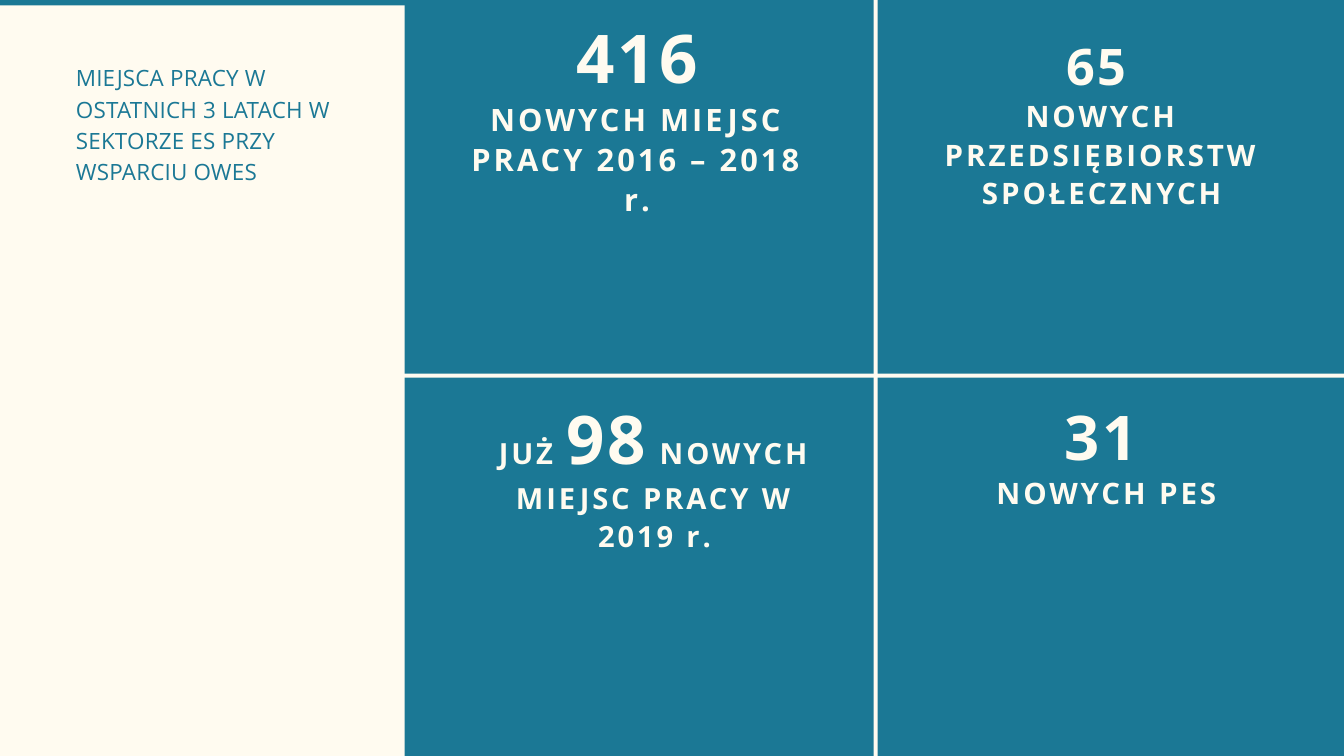
from pptx import Presentation
from pptx.dml.color import RGBColor
from pptx.enum.shapes import MSO_SHAPE
from pptx.enum.text import MSO_ANCHOR, MSO_AUTO_SIZE, PP_ALIGN
from pptx.util import Inches, Pt

TEAL = RGBColor(0x1B, 0x78, 0x95)
CREAM = RGBColor(0xFF, 0xFB, 0xF0)
FONT = "Open Sans"
WIDTH, HEIGHT = 20, 11.25
PANEL_RIGHT = 6.02
COL_RULE, ROW_RULE, RULE = 13, 5.56, 0.06
COLUMNS = [(PANEL_RIGHT, COL_RULE), (COL_RULE + RULE, WIDTH)]
ROWS = [(0, ROW_RULE), (ROW_RULE + RULE, HEIGHT)]

CELLS = [
    (0, 0, (0.88, 0.85, 5.16, 3.02), 33,
     [[("416", 72)], [("NOWYCH MIEJSC PRACY 2016 – 2018 r.", 33)]]),
    (1, 0, (0.86, 0.85, 4.95, 2.27), 31.6,
     [[("65", 54), (" ", 31.6)],
      [("NOWYCH PRZEDSIĘBIORSTW SPOŁECZNYCH", 31.6)]]),
    (0, 1, (1.28, 0.93, 4.88, 1.73), 31.19,
     [[("JUŻ ", 31.19), ("98", 72), (" ", 32),
       ("NOWYCH MIEJSC PRACY W 2019 r.", 31.19)]]),
    (1, 1, (0.93, 0.84, 4.95, 1.12), 31.6,
     [[("31", 66), (" ", 31.6)], [("NOWYCH PES", 31.6)]]),
]


def add_block(s, box):
    """Draw a plain cream rectangle in the box."""
    sp = s.shapes.add_shape(MSO_SHAPE.RECTANGLE, *map(Inches, box))
    sp.shadow.inherit = False
    sp.fill.solid()
    sp.fill.fore_color.rgb = CREAM
    sp.line.fill.background()


def add_text(s, box, paragraphs, leading, tracking, color, align, bold):
    """Place paragraphs of (text, size) runs in the box."""
    tf = s.shapes.add_textbox(*map(Inches, box)).text_frame
    tf.word_wrap = True
    tf.auto_size = MSO_AUTO_SIZE.SHAPE_TO_FIT_TEXT
    tf.vertical_anchor = MSO_ANCHOR.TOP
    tf.margin_left = tf.margin_top = tf.margin_right = tf.margin_bottom = 0
    for i, runs in enumerate(paragraphs):
        p = tf.add_paragraph() if i else tf.paragraphs[0]
        p.alignment = align
        p.line_spacing = Pt(leading)
        p.font.name = FONT
        p.font.bold = bold
        p.font.color.rgb = color
        for text, size in runs:
            r = p.add_run()
            r.text = text
            r.font.size = Pt(size)
            r._r.get_or_add_rPr().set("spc", str(int(tracking * 100)))


def add_rules(s, box):
    """Draw the two rules that split the box into four cells."""
    left, top, width, height = box
    add_block(s, (COL_RULE, top, RULE, height))
    add_block(s, (left, ROW_RULE, width, RULE))


def add_title_panel(s, box):
    """Draw the side panel with its title."""
    left, top, _, _ = box
    add_block(s, box)
    title = "MIEJSCA PRACY W OSTATNICH 3 LATACH W SEKTORZE ES PRZY WSPARCIU OWES"
    add_text(s, (left + 1.46, top + 0.81, 3.87, 1.91), [[(title, 24)]],
             33.6, 0.24, TEAL, PP_ALIGN.LEFT, False)


def add_figure_cell(s, cell, inset, size, paragraphs):
    """Write one key figure, spaced by its label size, inset in its cell."""
    dx, dy, width, height = inset
    add_text(s, (cell[0] + dx, cell[1] + dy, width, height), paragraphs,
             1.3 * size, 0.1 * size, CREAM, PP_ALIGN.CENTER, True)


def main():
    """Build the slide and save it."""
    prs = Presentation()
    prs.slide_width, prs.slide_height = Inches(WIDTH), Inches(HEIGHT)
    s = prs.slides.add_slide(prs.slide_layouts[6])
    s.background.fill.solid()
    s.background.fill.fore_color.rgb = TEAL
    add_rules(s, (5.89, -0.12, 14.33, 11.73))
    add_title_panel(s, (-0.33, 0.08, PANEL_RIGHT + 0.33, 11.79))
    for col, row, inset, size, paragraphs in CELLS:
        corner = COLUMNS[col][0], ROWS[row][0]
        add_figure_cell(s, corner, inset, size, paragraphs)
    prs.save("out.pptx")


if __name__ == "__main__":
    main()
